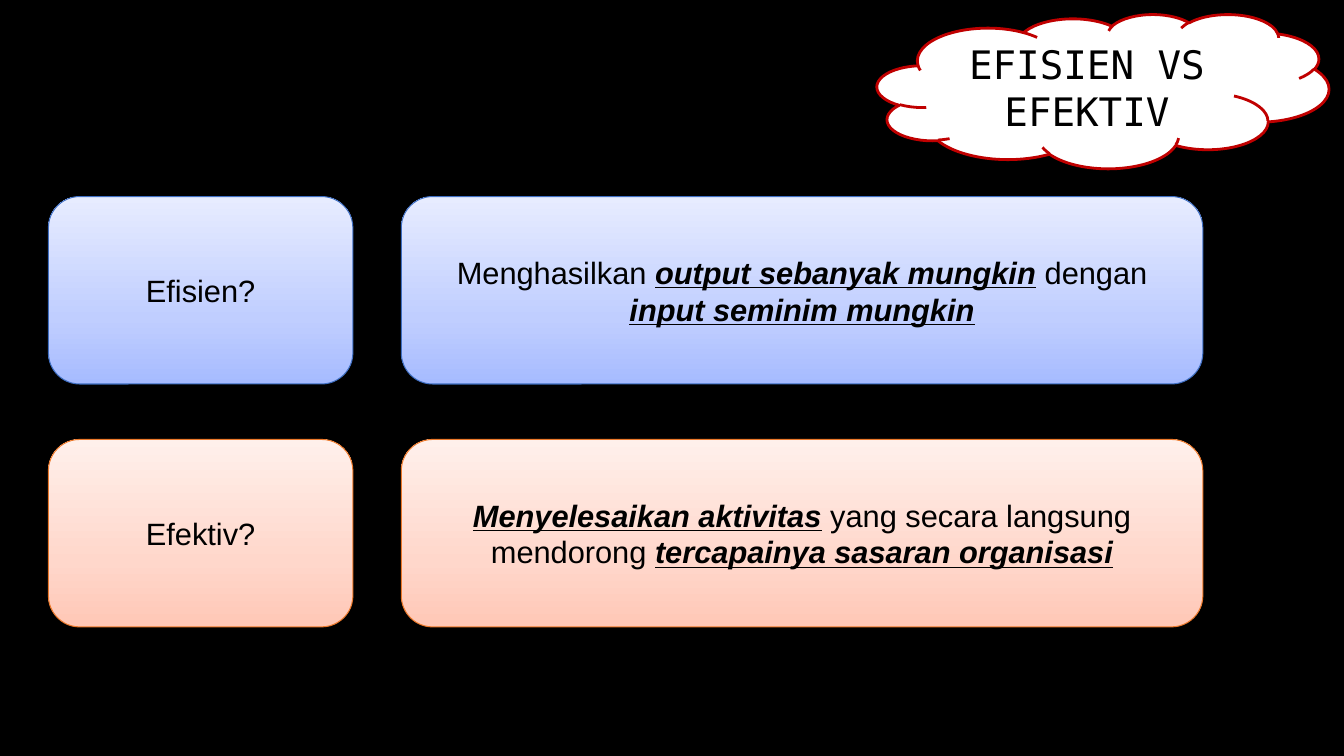
from lxml import etree
from pptx import Presentation
from pptx.dml.color import RGBColor
from pptx.enum.shapes import MSO_SHAPE
from pptx.enum.text import MSO_ANCHOR, MSO_AUTO_SIZE, PP_ALIGN
from pptx.oxml.ns import qn
from pptx.util import Inches, Pt

CLOUD, CARD = MSO_SHAPE.CLOUD, MSO_SHAPE.ROUNDED_RECTANGLE
MIDDLE, CENTER, NO_FIT = MSO_ANCHOR.MIDDLE, PP_ALIGN.CENTER, MSO_AUTO_SIZE.NONE

HEADING = "EFISIEN VS EFEKTIV"
PLAIN, KEY = False, True
CONCEPTS = [
    ("blue", [("Efisien?", PLAIN)],
     [("Menghasilkan ", PLAIN), ("output sebanyak mungkin", KEY),
      (" dengan ", PLAIN), ("input seminim mungkin", KEY)]),
    ("orange", [("Efektiv?", PLAIN)],
     [("Menyelesaikan aktivitas", KEY), (" yang secara langsung mendorong ", PLAIN),
      ("tercapainya sasaran organisasi", KEY)]),
]
THEME = {
    "background": "000000", "text": "000000", "cloud": "FFFFFF", "outline": "C00000",
    "blue": {"line": "3F6FC3", "stops": [(0, "A6BBFF"), (35, "C0CEFF"), (100, "E7ECFF")]},
    "orange": {"line": "EC792B", "stops": [(0, "FFC7B6"), (35, "FFD7CB"), (100, "FFF0EB")]},
    "heading": {"name": "DejaVu Sans Mono", "size": Pt(28)},
    "body": {"name": "Arial", "size": Pt(22)},
}

SLIDE_W, SLIDE_H = 13.33, 7.5
CLOUD_BOX = (8.7, 0.14, 4.48, 1.53)
CLOUD_TEXT = (0.138, 0.151, 0.653, 0.652)
LEFT, TOP, GUTTER, ROW_GAP = 0.48, 1.95, 0.48, 0.55
CARD_H, COLUMN_WIDTHS = 1.86, (3.02, 7.95)


def rgb(code):
    return RGBColor.from_string(code)


def inches(box):
    return [Inches(length) for length in box]


def child(parent, tag, **attributes):
    return etree.SubElement(parent, qn(tag), {k: str(v) for k, v in attributes.items()})


def write(shape, runs, font_style):
    frame = shape.text_frame
    for key, value in {"word_wrap": True, "auto_size": NO_FIT,
                       "vertical_anchor": MIDDLE}.items():
        setattr(frame, key, value)
    paragraph = frame.paragraphs[0]
    paragraph.alignment = CENTER
    for words, emphasis in runs:
        run = paragraph.add_run()
        run.text = words
        style = dict(font_style, bold=emphasis, italic=emphasis, underline=emphasis)
        for key, value in style.items():
            setattr(run.font, key, value)
        run.font.color.rgb = rgb(THEME["text"])


def add_outlined(slide, kind, box, line, width):
    shape = slide.shapes.add_shape(kind, *inches(box))
    shape.shadow.inherit = False
    shape.line.color.rgb = rgb(line)
    shape.line.width = Pt(width)
    return shape


def add_card(slide, box, palette, runs):
    card = add_outlined(slide, CARD, box, palette["line"], 0.75)
    card.fill.gradient()
    card.fill.gradient_angle = 90
    stops = card.element.spPr.find(qn("a:gradFill")).find(qn("a:gsLst"))
    for stop in list(stops):
        stops.remove(stop)
    for position, color in palette["stops"]:
        child(child(stops, "a:gs", pos=position * 1000), "a:srgbClr", val=color)
    effects = card.element.spPr.find(qn("a:effectLst"))
    shadow = child(effects, "a:outerShdw", blurRad=Pt(3.1), dist=Pt(1.6),
                   dir=90 * 60000, rotWithShape=0)
    child(child(shadow, "a:srgbClr", val=THEME["background"]), "a:alpha", val=38000)
    write(card, runs, THEME["body"])


def add_heading(slide):
    cloud = add_outlined(slide, CLOUD, CLOUD_BOX, THEME["outline"], 2)
    cloud.fill.solid()
    cloud.fill.fore_color.rgb = rgb(THEME["cloud"])
    x, y, w, h = CLOUD_BOX
    share_x, share_y, share_w, share_h = CLOUD_TEXT
    title = slide.shapes.title
    box = inches((x + w * share_x, y + h * share_y, w * share_w, h * share_h))
    for key, value in zip(("left", "top", "width", "height"), box):
        setattr(title, key, value)
    write(title, [(HEADING, PLAIN)], THEME["heading"])
    cloud.element.addnext(title.element)


def main():
    deck = Presentation()
    deck.slide_width, deck.slide_height = inches((SLIDE_W, SLIDE_H))
    slide = deck.slides.add_slide(deck.slide_layouts[5])
    slide.background.fill.solid()
    slide.background.fill.fore_color.rgb = rgb(THEME["background"])
    add_heading(slide)
    for row, (color, *cells) in enumerate(CONCEPTS):
        top = TOP + row * (CARD_H + ROW_GAP)
        left = LEFT
        for width, runs in zip(COLUMN_WIDTHS, cells):
            add_card(slide, (left, top, width, CARD_H), THEME[color], runs)
            left += width + GUTTER
    deck.save("out.pptx")


if __name__ == "__main__":
    main()
